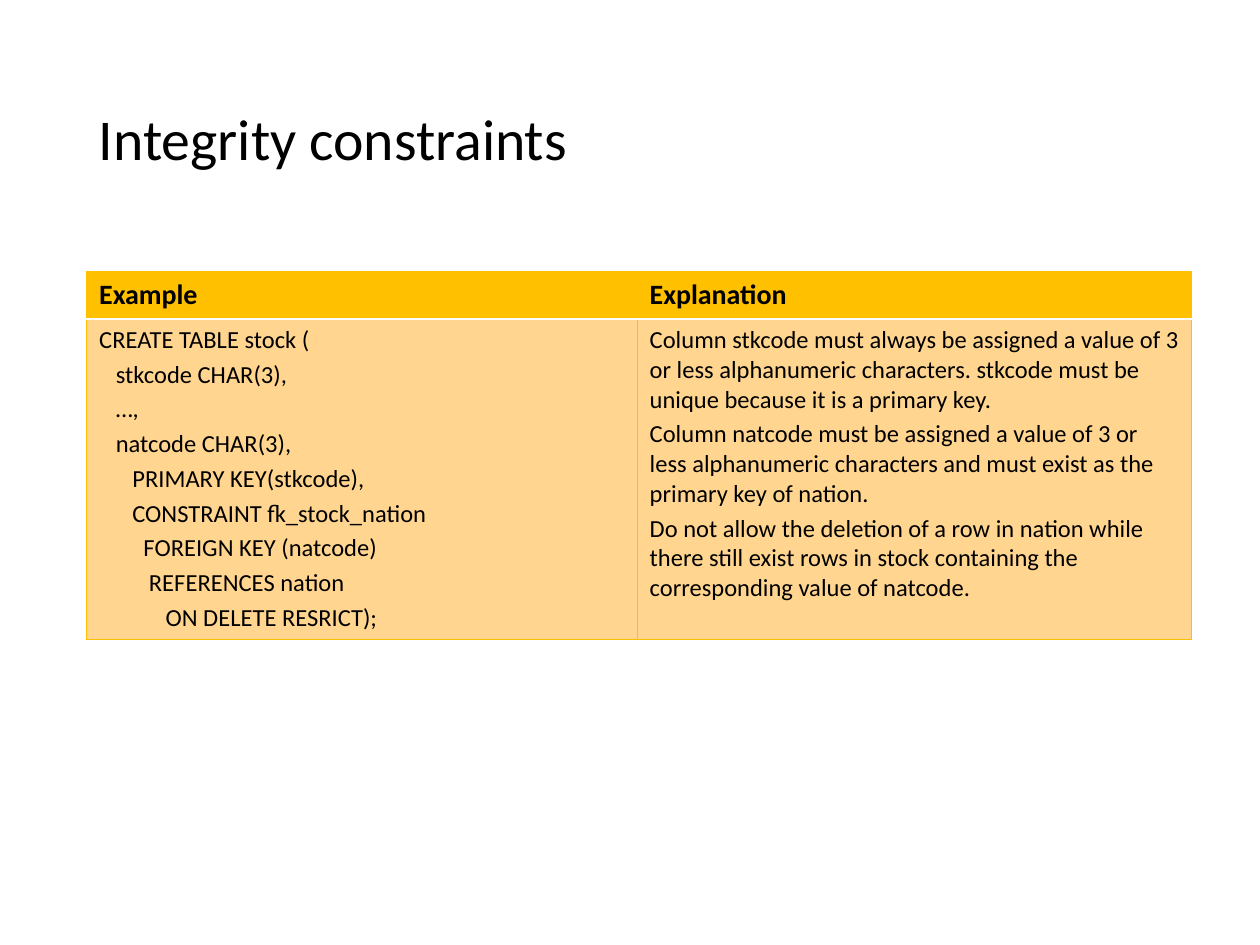
from dataclasses import dataclass

from lxml.etree import SubElement
from pptx import Presentation
from pptx.dml.color import RGBColor as RGB
from pptx.enum.text import MSO_ANCHOR as Anchor
from pptx.oxml.ns import qn
from pptx.util import Pt


@dataclass(frozen=True)
class Theme:
    font: str = "Calibri"
    ink: str = "000000"
    gold: str = "FFC000"
    pale_gold: str = "FFD58F"
    white: str = "FFFFFF"
    title_size: float = 33
    header_size: float = 16
    body_size: float = 14
    thin: float = 0.5
    rule: float = 1
    space_width: float = 3.16


THEME = Theme()
HEADERS = ("Example", "Explanation")
# Each line of code with its indent, counted in space widths
CODE = (
    (0, "CREATE TABLE stock ("),
    (3, "stkcode CHAR(3),"),
    (3, "…,"),
    (3, "natcode CHAR(3),"),
    (6, "PRIMARY KEY(stkcode),"),
    (6, "CONSTRAINT fk_stock_nation"),
    (8, "FOREIGN KEY (natcode)"),
    (9, "REFERENCES nation"),
    (12, "ON DELETE RESRICT);"),
)
EXPLANATION = (
    (0, "Column stkcode must always be assigned a value of 3 or less alphanumeric "
        "characters. stkcode must be unique because it is a primary key."),
    (0, "Column natcode must be assigned a value of 3 or less alphanumeric "
        "characters and must exist as the primary key of nation."),
    (0, "Do not allow the deletion of a row in nation while there still exist rows "
        "in stock containing the corresponding value of natcode."),
)


def write_lines(frame, lines, size, bold=False, **paragraph_format):
    """Fill a text frame with (indent, text) lines, one paragraph each."""
    font_format = {"name": THEME.font, "size": Pt(size), "bold": bold}
    for index, (indent, text) in enumerate(lines):
        paragraph = frame.add_paragraph() if index else frame.paragraphs[0]
        for name, value in paragraph_format.items():
            setattr(paragraph, name, value)
        if indent:
            margin = Pt(indent * THEME.space_width)
            paragraph._p.get_or_add_pPr().set("marL", str(margin))
        run = paragraph.add_run()
        run.text = text
        for name, value in font_format.items():
            setattr(run.font, name, value)
        run.font.color.rgb = RGB.from_string(THEME.ink)


def draw_borders(cell, **special):
    """Give a cell thin gold borders, except the sides named in special."""
    properties = cell._tc.get_or_add_tcPr()
    for side in "LRTB":
        color, width = special.get(side, (THEME.gold, THEME.thin))
        line = SubElement(properties, qn(f"a:ln{side}"), w=str(Pt(width)))
        fill = SubElement(line, qn("a:solidFill"))
        SubElement(fill, qn("a:srgbClr"), val=color)


def add_title(slide, left, top, width, height):
    box = slide.shapes.add_textbox(Pt(left), Pt(top), Pt(width), Pt(height))
    frame = box.text_frame
    frame.word_wrap = True
    frame.vertical_anchor = Anchor.MIDDLE
    write_lines(frame, [(0, "Integrity constraints")], THEME.title_size,
                line_spacing=0.9)


def add_constraint_table(slide, left, top, width, height):
    header_height, example_width = 27, 314.6
    table = slide.shapes.add_table(
        2, 2, Pt(left), Pt(top), Pt(width), Pt(height)).table
    table.columns[0].width = Pt(example_width)
    table.columns[1].width = Pt(width - example_width)
    table.rows[0].height = Pt(header_height)
    table.rows[1].height = Pt(height - header_height)

    white_rule = (THEME.white, THEME.rule)
    header_cells = [[(0, header)] for header in HEADERS]
    rows = (
        (header_cells, THEME.header_size, True, THEME.gold, {"B": white_rule}),
        ((CODE, EXPLANATION), THEME.body_size, False, THEME.pale_gold,
         {"T": white_rule}),
    )
    for row, (contents, size, bold, color, special) in enumerate(rows):
        for column, lines in enumerate(contents):
            cell = table.cell(row, column)
            draw_borders(cell, **special)
            cell.fill.solid()
            cell.fill.fore_color.rgb = RGB.from_string(color)
            write_lines(cell.text_frame, lines, size, bold,
                        space_before=Pt(0.2 * size))


def main():
    deck = Presentation()
    deck.slide_width, deck.slide_height = Pt(720), Pt(540)
    slide = deck.slides.add_slide(deck.slide_layouts[6])
    add_title(slide, 49.5, 28.75, 621, 104.4)
    add_constraint_table(slide, 49.5, 155.2, 631.6, 210)
    deck.save("out.pptx")


if __name__ == "__main__":
    main()
